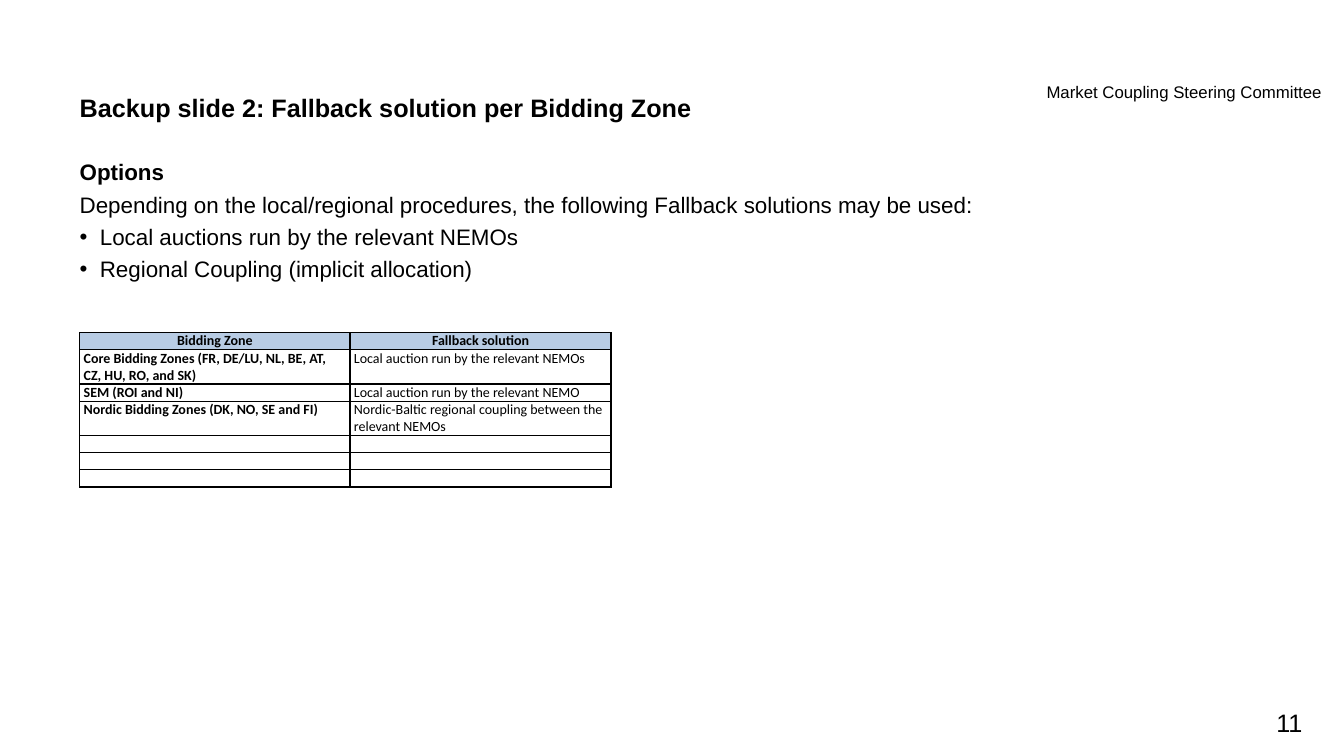
from lxml import etree
from pptx import Presentation
from pptx import util as u
from pptx.dml.color import RGBColor
from pptx.enum import text
from pptx.oxml.ns import qn

COLOURS = {"ink": "000000", "header": "B8CCE4"}
SLIDE_W, SLIDE_H = u.Inches(13.33), u.Inches(7.5)
LEFT, WIDTH = 5.93, 88
COLUMNS = (20.11, 19.43)
LINE = 2.27
INDENT = u.Inches(0.2)
BODY = [
    ("Options", True, False),
    ("Depending on the local/regional procedures, the following Fallback solutions may be used:", False, False),
    ("Local auctions run by the relevant NEMOs", False, True),
    ("Regional Coupling (implicit allocation)", False, True),
]
ROWS = [
    (1, "Bidding Zone", "Fallback solution"),
    (2, "Core Bidding Zones (FR, DE/LU, NL, BE, AT, CZ, HU, RO, and SK)", "Local auction run by the relevant NEMOs"),
    (1, "SEM (ROI and NI)", "Local auction run by the relevant NEMO"),
    (2, "Nordic Bidding Zones (DK, NO, SE and FI)", "Nordic-Baltic regional coupling between the relevant NEMOs"),
] + [(1, "", "")] * 3


def across(share):
    """Turn a percentage of the slide width into a length."""
    return u.Emu(round(SLIDE_W * share / 100))


def down(share):
    """Turn a percentage of the slide height into a length."""
    return u.Emu(round(SLIDE_H * share / 100))


def box(x, y, w, h):
    """Return left, top, width and height from percentages of the slide."""
    return across(x), down(y), across(w), down(h)


def add_run(p, words, size, bold=False, font="Arial"):
    """Append one formatted run to a paragraph."""
    r = p.add_run()
    r.text = words
    r.font.name, r.font.size, r.font.bold = font, u.Pt(size), bold
    r.font.color.rgb = RGBColor.from_string(COLOURS["ink"])


def prepare_frame(sp):
    """Give a shape a wrapping, top-anchored frame without insets."""
    tf = sp.text_frame
    tf.margin_left = tf.margin_right = tf.margin_top = tf.margin_bottom = 0
    tf.auto_size = text.MSO_AUTO_SIZE.NONE
    tf.word_wrap = True
    tf.vertical_anchor = text.MSO_ANCHOR.TOP
    return tf


def add_title(s, words):
    """Place and fill the title placeholder."""
    sp = s.shapes.title
    sp.left, sp.top, sp.width, sp.height = box(LEFT, 12.27, WIDTH, 8.53)
    p = prepare_frame(sp).paragraphs[0]
    p.alignment = text.PP_ALIGN.LEFT
    add_run(p, words, 18, True)


def add_label(s, words, size, place):
    """Add a one-line text box."""
    tf = prepare_frame(s.shapes.add_textbox(*box(*place)))
    add_run(tf.paragraphs[0], words, size)


def add_bullet(p):
    """Give a paragraph a hanging bullet."""
    pPr = p._p.get_or_add_pPr()
    pPr.set("marL", str(INDENT))
    pPr.set("indent", str(-INDENT))
    etree.SubElement(pPr, qn("a:buFont"), typeface="Arial")
    etree.SubElement(pPr, qn("a:buChar"), char="•")


def add_body(s):
    """Add the options text with its bullets."""
    tf = prepare_frame(s.shapes.add_textbox(*box(LEFT, 20.93, WIDTH, 71.33)))
    for i, (words, bold, bulleted) in enumerate(BODY):
        p = tf.add_paragraph() if i else tf.paragraphs[0]
        if i:
            p.space_before = u.Pt(4)
        if bulleted:
            add_bullet(p)
        add_run(p, words, 16, bold)


def add_borders(cell):
    """Draw a thin line on each side of a cell."""
    tcPr = cell._tc.get_or_add_tcPr()
    for side in ("a:lnL", "a:lnR", "a:lnT", "a:lnB"):
        ln = etree.SubElement(tcPr, qn(side), w=str(u.Pt(1)))
        fill = etree.SubElement(ln, qn("a:solidFill"))
        etree.SubElement(fill, qn("a:srgbClr"), val=COLOURS["ink"])


def fill_cell(cell, words, header, bold):
    """Format one table cell and write its text."""
    cell.margin_left = cell.margin_right = u.Inches(0.04)
    cell.margin_top = cell.margin_bottom = 0
    add_borders(cell)
    p = cell.text_frame.paragraphs[0]
    if header:
        cell.fill.solid()
        cell.fill.fore_color.rgb = RGBColor.from_string(COLOURS["header"])
        cell.vertical_anchor = text.MSO_ANCHOR.MIDDLE
        p.alignment = text.PP_ALIGN.CENTER
    else:
        cell.fill.background()
    if words:
        add_run(p, words, 10, bold, "Calibri")
    else:
        end = etree.SubElement(p._p, qn("a:endParaRPr"), sz="1000")
        etree.SubElement(end, qn("a:latin"), typeface="Calibri")


def add_zone_table(s):
    """Add the table of fallback solutions per bidding zone."""
    height = LINE * sum(row[0] for row in ROWS)
    place = box(LEFT, 44, sum(COLUMNS), height)
    table = s.shapes.add_table(len(ROWS), len(COLUMNS), *place).table
    table.first_row = table.horz_banding = False
    for column, share in zip(table.columns, COLUMNS):
        column.width = across(share)
    for i, (lines, *cells) in enumerate(ROWS):
        table.rows[i].height = down(LINE * lines)
        for j, words in enumerate(cells):
            fill_cell(table.cell(i, j), words, i == 0, i == 0 or j == 0)


def main():
    """Build the slide and save it."""
    prs = Presentation()
    prs.slide_width, prs.slide_height = SLIDE_W, SLIDE_H
    s = prs.slides.add_slide(prs.slide_layouts[5])
    add_label(s, "Market Coupling Steering Committee", 12, (77.87, 10.8, 21.75, 2.67))
    add_label(s, "11", 18, (94.97, 93.6, 3.98, 4))
    add_title(s, "Backup slide 2: Fallback solution per Bidding Zone")
    add_body(s)
    add_zone_table(s)
    prs.save("out.pptx")


if __name__ == "__main__":
    main()
